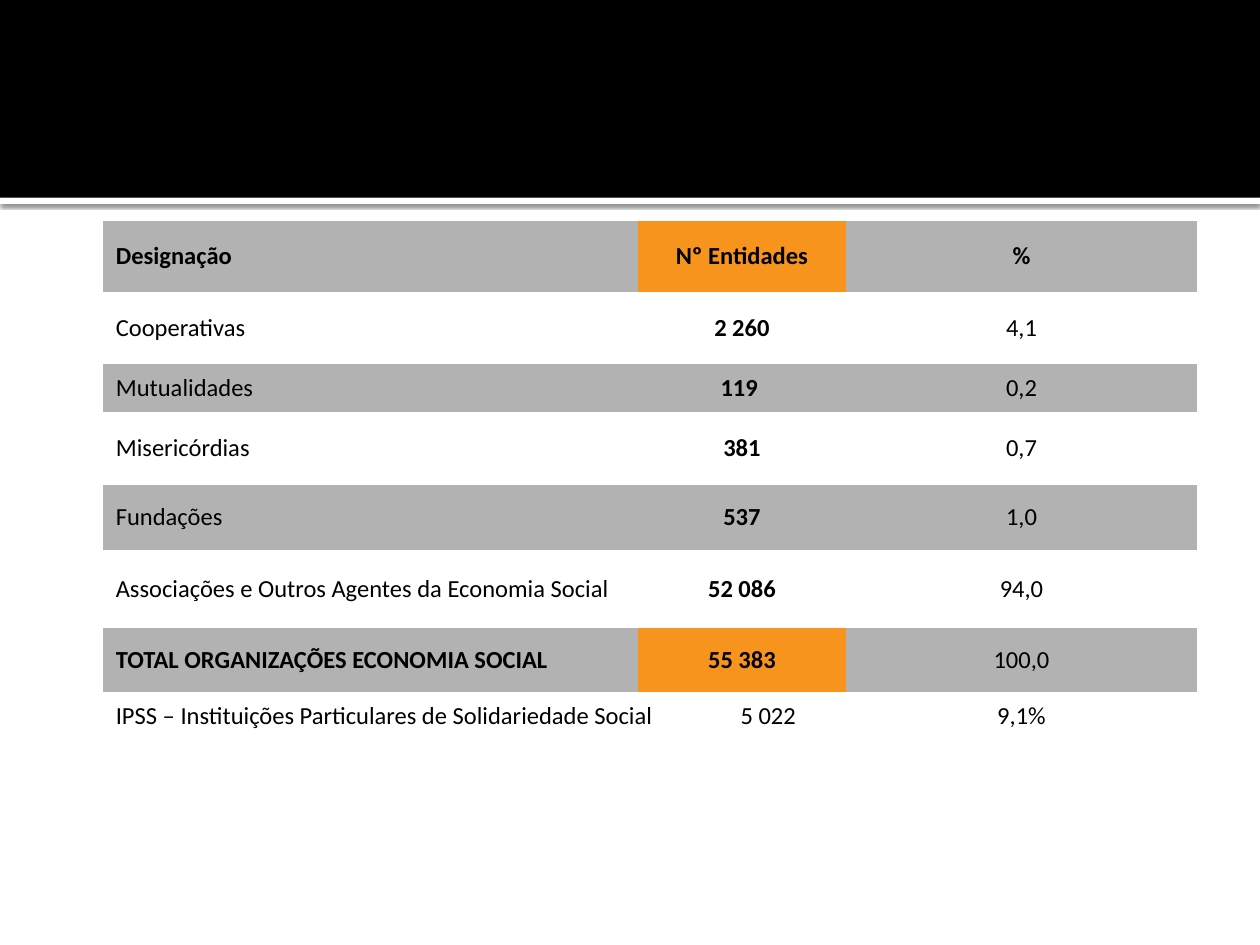
from dataclasses import dataclass

from lxml.etree import SubElement
from pptx import Presentation
from pptx.dml.color import RGBColor
from pptx.enum.shapes import MSO_SHAPE
from pptx.enum.text import MSO_ANCHOR, PP_ALIGN
from pptx.oxml import parse_xml
from pptx.oxml.ns import nsdecls, qn
from pptx.util import Pt


@dataclass(frozen=True)
class Theme:
    font: str = "Calibri"
    size: float = 14
    gap: float = 2.8
    ink: str = "000000"
    paper: str = "FFFFFF"
    band: str = "B2B2B2"
    accent: str = "F7941E"
    plain: str = "{2D5ABB26-0587-4C30-8999-92F81FD0307C}"


class Deck:
    """Draws styled elements on the current slide, with lengths in points."""

    def __init__(self, theme, width, height):
        self.theme = theme
        self.prs = Presentation()
        self.prs.slide_width, self.prs.slide_height = Pt(width), Pt(height)
        self.slide = self.prs.slides.add_slide(self.prs.slide_layouts[6])

    def bar(self, top, height, color, shadow=False):
        shape = self.slide.shapes.add_shape(
            MSO_SHAPE.RECTANGLE, 0, Pt(top), self.prs.slide_width, Pt(height))
        shape.shadow.inherit = False
        shape.fill.solid()
        shape.fill.fore_color.rgb = RGBColor.from_string(color)
        shape.line.fill.background()
        if shadow:
            effects = shape._element.spPr.find(qn("a:effectLst"))
            effects.append(parse_xml(
                f'<a:outerShdw {nsdecls("a")} blurRad="{Pt(2.5)}" dist="{Pt(0.8)}" '
                'dir="5400000" algn="tl" rotWithShape="0">'
                f'<a:srgbClr val="{self.theme.ink}"><a:alpha val="60000"/></a:srgbClr>'
                '</a:outerShdw>'))

    def table(self, left, top, widths, heights):
        frame = self.slide.shapes.add_table(
            len(heights), len(widths), Pt(left), Pt(top),
            Pt(sum(widths)), Pt(sum(heights)))
        table = frame.table
        table.first_row = table.horz_banding = False
        table._tbl.tblPr.find(qn("a:tableStyleId")).text = self.theme.plain
        for col, width in zip(table.columns, widths):
            col.width = Pt(width)
        for row, height in zip(table.rows, heights):
            row.height = Pt(height)
        return table

    def cell(self, cell, text, fill, bold=False, center=False, tab=None):
        cell.fill.solid()
        cell.fill.fore_color.rgb = RGBColor.from_string(fill)
        cell.vertical_anchor = MSO_ANCHOR.MIDDLE
        para = cell.text_frame.paragraphs[0]
        para.text = text
        para.alignment = PP_ALIGN.CENTER if center else PP_ALIGN.LEFT
        para.space_before = Pt(self.theme.gap)
        if tab:
            stops = SubElement(para._p.get_or_add_pPr(), qn("a:tabLst"))
            SubElement(stops, qn("a:tab"), pos=str(Pt(tab)), algn="l")
        font = para.font
        font.name, font.size, font.bold = self.theme.font, Pt(self.theme.size), bold
        font.color.rgb = RGBColor.from_string(self.theme.ink)

    def save(self):
        self.prs.save("out.pptx")


ROWS = [
    ("Designação", "Nº Entidades", "%"),
    ("Cooperativas", "2 260", "4,1"),
    ("Mutualidades", "119 ", "0,2"),
    ("Misericórdias", "381", "0,7"),
    ("Fundações", "537", "1,0"),
    ("Associações e Outros Agentes da Economia Social", "52 086", "94,0"),
    ("TOTAL ORGANIZAÇÕES ECONOMIA SOCIAL", "55 383", "100,0"),
]
NOTE = "IPSS – Instituições Particulares de Solidariedade Social\t5 022"
WIDTHS = [305.5, 119, 200.5]
HEIGHTS = [40.8, 41, 27.7, 41.5, 37.4, 44.6, 36.6, 27.7]


def main():
    theme = Theme()
    deck = Deck(theme, 720, 540)
    deck.bar(113, 3.6, theme.paper, shadow=True)
    deck.bar(0, 113, theme.ink)
    table = deck.table(59, 126, WIDTHS, HEIGHTS)
    last = len(ROWS) - 1
    for r, row in enumerate(ROWS):
        for c, text in enumerate(row):
            fill = theme.paper if r % 2 else theme.band
            if c == 1 and r in (0, last):
                fill = theme.accent
            bold = r == 0 or c == 1 or (r == last and c == 0)
            deck.cell(table.cell(r, c), text, fill, bold, center=c > 0)
    foot = len(ROWS)
    table.cell(foot, 0).merge(table.cell(foot, 1))
    deck.cell(table.cell(foot, 0), NOTE, theme.paper, tab=357)
    deck.cell(table.cell(foot, 2), "9,1%", theme.paper, center=True)
    deck.save()


if __name__ == "__main__":
    main()
